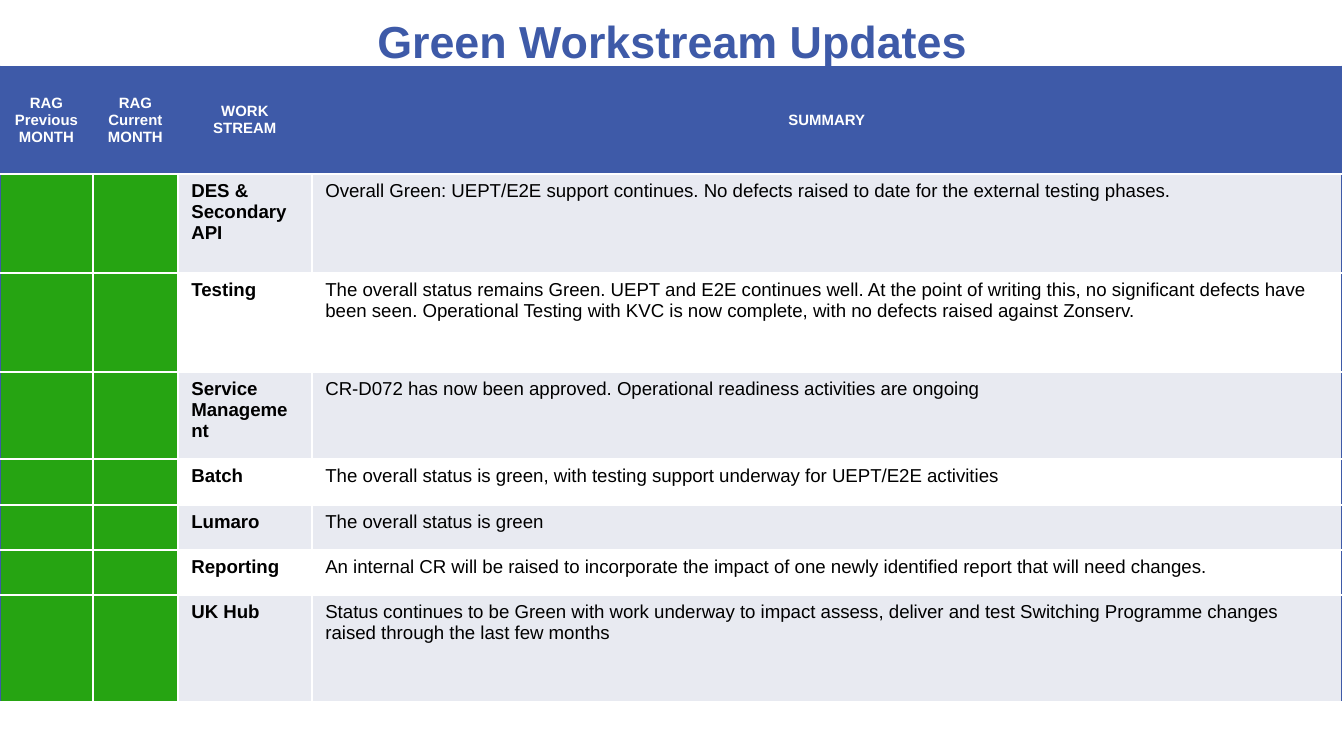
from lxml import etree
from pptx import Presentation
from pptx import util as u
from pptx.dml.color import RGBColor
from pptx.enum import text
from pptx.oxml import ns

PX = 914400 / 134.4
BLUE = RGBColor(0x3E, 0x5A, 0xA8)
GREEN = RGBColor(0x26, 0xA4, 0x12)
TINT = RGBColor(0xE8, 0xEA, 0xF1)
WHITE = RGBColor(0xFF, 0xFF, 0xFF)
BLACK = RGBColor(0, 0, 0)
FONT = "Arial"

COLUMNS = [93, 85, 134, 1030]
ROWS = [108, 99, 99, 87, 46, 45, 45, 107]
HEADERS = [
    ["RAG", "Previous", "MONTH"],
    ["RAG", "Current", "MONTH"],
    ["WORK", "STREAM"],
    ["SUMMARY"],
]
WORKSTREAMS = [
    ("DES & Secondary API",
     "Overall Green: UEPT/E2E support continues. No defects raised to date for the "
     "external testing phases."),
    ("Testing",
     "The overall status remains Green. UEPT and E2E continues well. At the point of "
     "writing this, no significant defects have been seen. Operational Testing with KVC "
     "is now complete, with no defects raised against Zonserv."),
    ("Service Management",
     "CR-D072 has now been approved. Operational readiness activities are ongoing"),
    ("Batch",
     "The overall status is green, with testing support underway for UEPT/E2E activities"),
    ("Lumaro", "The overall status is green"),
    ("Reporting",
     "An internal CR will be raised to incorporate the impact of one newly identified "
     "report that will need changes."),
    ("UK Hub",
     "Status continues to be Green with work underway to impact assess, deliver and test "
     "Switching Programme changes raised through the last few months"),
]


def px(length):
    return u.Emu(round(length * PX))


def write(frame, lines, size, color, bold, align=text.PP_ALIGN.LEFT):
    for index, line in enumerate(lines):
        paragraph = frame.add_paragraph() if index else frame.paragraphs[0]
        paragraph.alignment = align
        run = paragraph.add_run()
        run.text = line
        run.font.name = FONT
        run.font.size = u.Pt(size)
        run.font.bold = bold
        run.font.color.rgb = color


def set_borders(cell, edges):
    """Draw left, right, top and bottom edges, each (colour, points) or None."""
    properties = cell._tc.get_or_add_tcPr()
    for index, (side, edge) in enumerate(zip("LRTB", edges)):
        line = etree.Element(ns.qn(f"a:ln{side}"))
        if edge:
            color, points = edge
            line.set("w", str(u.Pt(points)))
            fill = etree.SubElement(line, ns.qn("a:solidFill"))
            etree.SubElement(fill, ns.qn("a:srgbClr")).set("val", str(color))
        else:
            etree.SubElement(line, ns.qn("a:noFill"))
        properties.insert(index, line)


def style_cell(cell, row, column, color):
    cell.fill.solid()
    cell.fill.fore_color.rgb = color
    outer, inner = (BLUE, 0.5), (WHITE, 1)
    between = inner if row else None
    set_borders(cell, [
        between if column else outer,
        between if column < len(COLUMNS) - 1 else outer,
        inner if row else outer,
        inner,
    ])


def add_title(slide, left, top, width, height):
    box = slide.shapes.add_textbox(px(left), px(top), px(width), px(height))
    frame = box.text_frame
    frame.word_wrap = True
    frame.vertical_anchor = text.MSO_ANCHOR.MIDDLE
    write(frame, ["Green Workstream Updates"], 24, BLUE, True, text.PP_ALIGN.CENTER)


def add_status_table(slide, left, top):
    shape = slide.shapes.add_table(len(ROWS), len(COLUMNS), px(left), px(top),
                                   px(sum(COLUMNS)), px(sum(ROWS)))
    table = shape.table
    for column, width in zip(table.columns, COLUMNS):
        column.width = px(width)
    for row, height in zip(table.rows, ROWS):
        row.height = px(height)

    for column, lines in enumerate(HEADERS):
        cell = table.cell(0, column)
        style_cell(cell, 0, column, BLUE)
        cell.vertical_anchor = text.MSO_ANCHOR.MIDDLE
        write(cell.text_frame, lines, 8, WHITE, True, text.PP_ALIGN.CENTER)

    for row, (name, summary) in enumerate(WORKSTREAMS, start=1):
        band = TINT if row % 2 else WHITE
        for column, color in enumerate([GREEN, GREEN, band, band]):
            style_cell(table.cell(row, column), row, column, color)
        for column in (0, 1):
            # A small end mark keeps the empty cell from stretching its row
            paragraph = table.cell(row, column).text_frame.paragraphs[0]
            paragraph._p.get_or_add_endParaRPr().set("sz", "1000")
        write(table.cell(row, 2).text_frame, [name], 10, BLACK, True)
        write(table.cell(row, 3).text_frame, [summary], 10, BLACK, False)


def main():
    presentation = Presentation()
    presentation.slide_width = px(1344)
    presentation.slide_height = px(756)
    slide = presentation.slides.add_slide(presentation.slide_layouts[6])
    add_status_table(slide, 0, 66)
    add_title(slide, 67, 0, 1210, 82)
    presentation.save("out.pptx")


if __name__ == "__main__":
    main()
